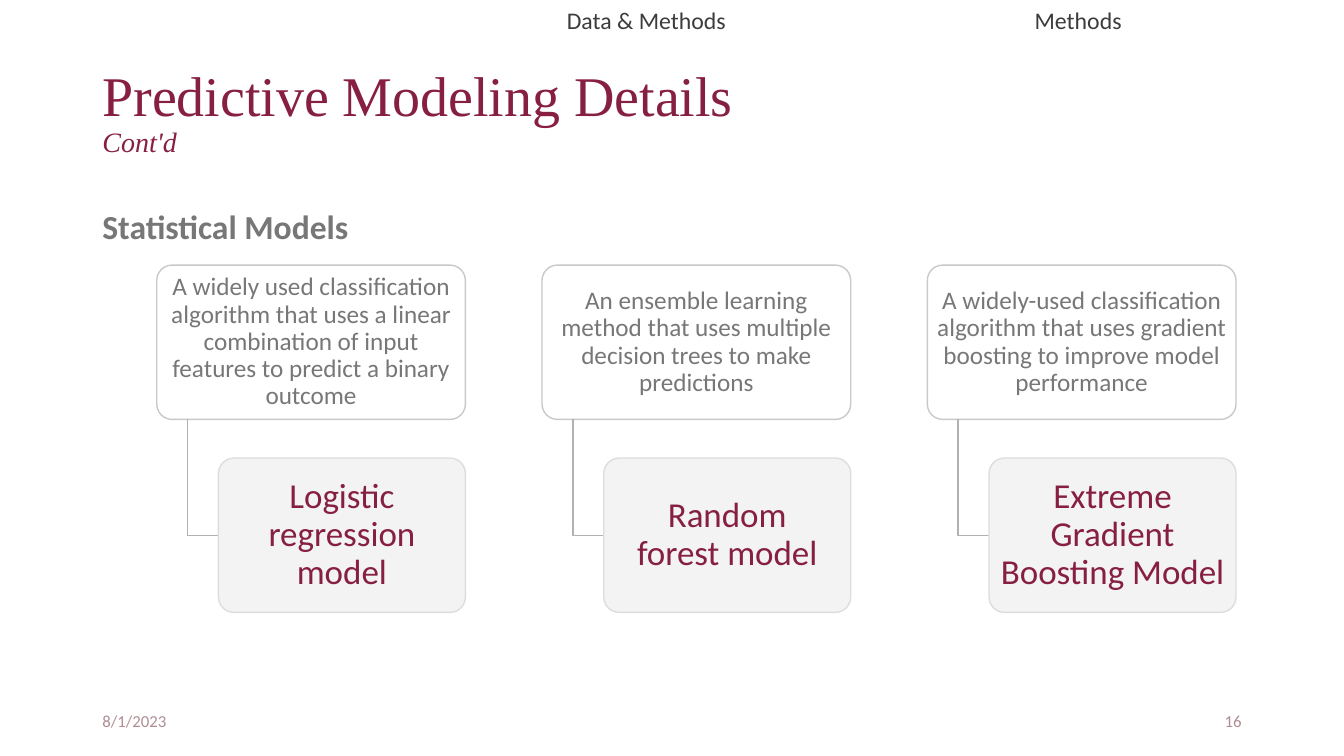
import pptx
import pptx.util
import pptx.dml.color
import pptx.enum.shapes
import pptx.enum.text
import pptx.oxml
import pptx.oxml.ns
from dataclasses import dataclass
from pptx.util import Cm


@dataclass(frozen=True)
class Theme:
    maroon: str = "861F41"
    gray: str = "777777"
    dark: str = "3C3C3C"
    footer: str = "AF8D93"
    white: str = "FFFFFF"
    pale: str = "F2F2F2"
    card_line: str = "C9C9C9"
    model_line: str = "DDDDDD"
    elbow: str = "B1B1B1"
    sans: str = "Calibri"
    serif: str = "Times New Roman"
    title_size: int = 40
    subtitle_size: int = 20
    heading_size: int = 24
    model_size: int = 25
    card_size: int = 18
    nav_size: int = 17
    footer_size: int = 12


theme = Theme()
rgb = pptx.dml.color.RGBColor.from_string
ALIGN = pptx.enum.text.PP_ALIGN
ANCHOR = pptx.enum.text.MSO_ANCHOR
ROUNDED = pptx.enum.shapes.MSO_SHAPE.ROUNDED_RECTANGLE


def write(sp, text, size, color, font=theme.sans, bold=False, italic=False,
          align=ALIGN.LEFT, anchor=ANCHOR.MIDDLE, spacing=1.0):
    tf = sp.text_frame
    tf.word_wrap = True
    tf.vertical_anchor = anchor
    p = tf.paragraphs[0]
    p.alignment = align
    p.line_spacing = spacing
    for i, line in enumerate(text.split("\n")):
        if i:
            p.add_line_break()
        if line:
            r = p.add_run()
            r.text = line
            r.font.name = font
            r.font.size = pptx.util.Pt(size)
            r.font.bold = bold
            r.font.italic = italic
            r.font.color.rgb = rgb(color)


def add_card(left, top, width, height, fill, line, text, size, color):
    sp = s.shapes.add_shape(ROUNDED, Cm(left), Cm(top), Cm(width), Cm(height))
    sp.adjustments[0] = 0.1
    sp.shadow.inherit = False
    sp.fill.solid()
    sp.fill.fore_color.rgb = rgb(fill)
    sp.line.color.rgb = rgb(line)
    sp.line.width = pptx.util.Pt(1)
    tf = sp.text_frame
    tf.margin_left = tf.margin_right = Cm(0.11)
    tf.margin_top = tf.margin_bottom = Cm(0.08)
    write(sp, text, size, color, align=ALIGN.CENTER, spacing=0.9)
    return sp


prs = pptx.Presentation()
prs.slide_width = Cm(33.87)
prs.slide_height = Cm(19.05)
s = prs.slides.add_slide(prs.slide_layouts[6])

title = s.shapes.add_textbox(Cm(2.33), Cm(1.02), Cm(29.21), Cm(3.68))
write(title, "Predictive Modeling Details\n", theme.title_size, theme.maroon,
      font=theme.serif, spacing=0.9)
write(title, "Cont'd", theme.subtitle_size, theme.maroon,
      font=theme.serif, italic=True, spacing=0.9)

heading = s.shapes.add_textbox(Cm(2.33), Cm(4.85), Cm(14.33), Cm(1.5))
write(heading, "Statistical Models", theme.heading_size, theme.gray,
      bold=True, anchor=ANCHOR.BOTTOM, spacing=0.9)

for left, text, align in [(2.33, "8/1/2023", ALIGN.LEFT), (23.92, "16", ALIGN.RIGHT)]:
    footer = s.shapes.add_textbox(Cm(left), Cm(17.66), Cm(7.62), Cm(1.01))
    write(footer, text, theme.footer_size, theme.footer, align=align)

for left, text in [(11.5, "Data & Methods"), (22.38, "Methods")]:
    nav = s.shapes.add_textbox(Cm(left), Cm(0.03), Cm(9.58), Cm(0.99))
    write(nav, text, theme.nav_size, theme.dark, align=ALIGN.CENTER, anchor=ANCHOR.TOP)

models = [
    ("A widely used classification algorithm that uses a linear combination of "
     "input features to predict a binary outcome", "Logistic regression model"),
    ("An ensemble learning method that uses multiple decision trees to make "
     "predictions", "Random\nforest model"),
    ("A widely-used classification algorithm that uses gradient boosting to "
     "improve model performance", "Extreme Gradient Boosting Model"),
]
first_left, pitch = 3.95, 9.71
card_top, card_width, card_height = 6.68, 7.78, 3.89
indent = card_width / 5
model_top = card_top + card_height * 1.25
card_bottom = card_top + card_height
model_middle = model_top + card_height / 2

for i, (description, name) in enumerate(models):
    left = first_left + i * pitch
    add_card(left, card_top, card_width, card_height, theme.white,
             theme.card_line, description, theme.card_size, theme.gray)

    elbow_x = Cm(left + indent / 2)
    fb = s.shapes.build_freeform(elbow_x, Cm(card_bottom))
    fb.add_line_segments([(elbow_x, Cm(model_middle)),
                          (Cm(left + indent), Cm(model_middle))], close=False)
    elbow = fb.convert_to_shape()
    elbow.shadow.inherit = False
    elbow.fill.background()
    elbow.line.color.rgb = rgb(theme.elbow)
    elbow.line.width = pptx.util.Pt(1)

    model = add_card(left + indent, model_top, card_width - indent, card_height,
                     theme.pale, theme.model_line, name, theme.model_size, theme.maroon)
    color = model.fill._xPr.find(".//" + pptx.oxml.ns.qn("a:srgbClr"))
    color.append(pptx.oxml.parse_xml(
        f'<a:alpha {pptx.oxml.ns.nsdecls("a")} val="90000"/>'))

prs.save("out.pptx")
